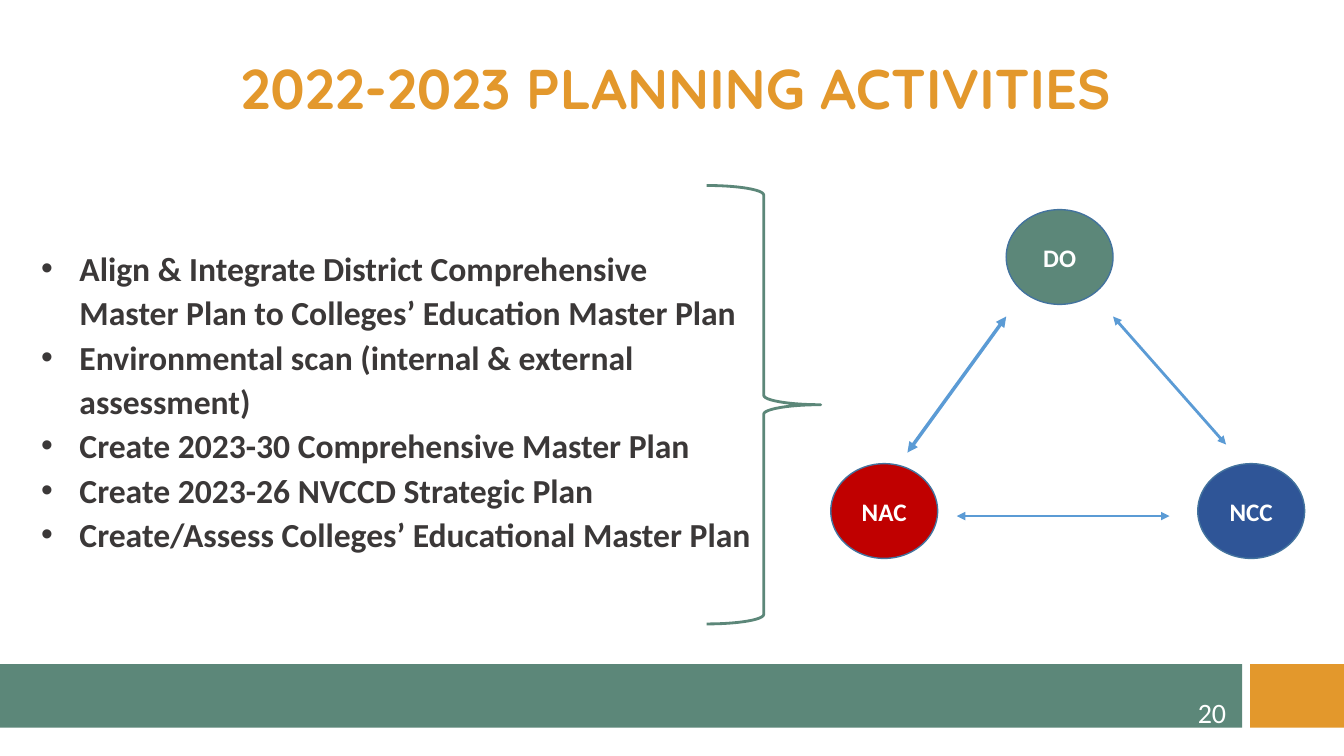
from lxml import etree
from pptx import Presentation
from pptx.dml.color import RGBColor
from pptx.enum.shapes import MSO_CONNECTOR, MSO_SHAPE
from pptx.enum.text import MSO_ANCHOR, PP_ALIGN
from pptx.oxml.ns import qn
from pptx.util import Pt

PX = 9144  # EMU per px, 100 px to the inch
RECT, BRACE = MSO_SHAPE.RECTANGLE, MSO_SHAPE.RIGHT_BRACE
NODE = MSO_SHAPE.FLOWCHART_CONNECTOR
STRAIGHT = MSO_CONNECTOR.STRAIGHT
TOP, MIDDLE = MSO_ANCHOR.TOP, MSO_ANCHOR.MIDDLE
LEFT, CENTER, RIGHT = PP_ALIGN.LEFT, PP_ALIGN.CENTER, PP_ALIGN.RIGHT

GREEN, ORANGE, RED, NAVY = "5C8779", "E3982C", "C00000", "2F5597"
WHITE, DARK, OUTLINE, ARROW = "FFFFFF", "3B3838", "43739E", "5B9BD5"

TITLE_FONT = {"name": "Quicksand", "size": Pt(40), "bold": True}
BODY_FONT = {"name": "Calibri", "size": Pt(24), "bold": True}
NODE_FONT = {"name": "Calibri", "size": Pt(18), "bold": True}
NUMBER_FONT = {"name": "Calibri", "size": Pt(20), "bold": False}

ACTIVITIES = [
    "Align & Integrate District Comprehensive Master Plan to Colleges’ Education Master Plan",
    "Environmental scan (internal & external assessment)",
    "Create 2023-30 Comprehensive Master Plan",
    "Create 2023-26 NVCCD Strategic Plan",
    "Create/Assess Colleges’ Educational Master Plan",
]
# Name, colour, offset in the diagram
NODES = [("DO", GREEN, 174, 0), ("NAC", RED, 0, 252), ("NCC", NAVY, 364, 252)]
# Start and end offsets in the diagram, line width
ARROWS = [
    (174, 106, 76, 241, 2.5),
    (336, 304, 125, 304, 2),
    (280, 106, 392, 233, 2),
]


def emu(*lengths):
    return [n * PX for n in lengths]


def color(value):
    return RGBColor.from_string(value)


def write(sp, lines, font, ink, align, anchor):
    tf = sp.text_frame
    tf.word_wrap = True
    tf.vertical_anchor = anchor
    for i, line in enumerate(lines):
        p = tf.paragraphs[0] if i == 0 else tf.add_paragraph()
        p.alignment = align
        r = p.add_run()
        r.text = line
        for key, value in font.items():
            setattr(r.font, key, value)
        r.font.color.rgb = color(ink)
    return tf


def add_shape(slide, kind, box, fill=None, line=None, width=1):
    sp = slide.shapes.add_shape(kind, *emu(*box))
    sp.shadow.inherit = False
    if fill:
        sp.fill.solid()
        sp.fill.fore_color.rgb = color(fill)
    else:
        sp.fill.background()
    if line:
        sp.line.color.rgb = color(line)
        sp.line.width = Pt(width)
    else:
        sp.line.fill.background()
    return sp


def add_title(slide, box):
    sp = slide.shapes.title
    sp.left, sp.top, sp.width, sp.height = emu(*box)
    write(sp, ["2022-2023 PLANNING ACTIVITIES"], TITLE_FONT, ORANGE, CENTER, TOP)


def add_footer(slide, box):
    x, y, w, h = box
    bar, gap = 1248, 8
    add_shape(slide, RECT, (x, y, bar, h), GREEN)
    add_shape(slide, RECT, (x + bar + gap, y, w - bar - gap, h), ORANGE)
    number = slide.shapes.add_textbox(*emu(x + 948, y + 28, 294, 40))
    write(number, ["20"], NUMBER_FONT, WHITE, RIGHT, MIDDLE)


def add_activities(slide, box):
    x, y, w, h = box
    sp = add_shape(slide, RECT, box, WHITE, WHITE)
    tf = write(sp, ACTIVITIES, BODY_FONT, DARK, LEFT, TOP)
    for p in tf.paragraphs:
        p.line_spacing = 1.1
        pPr = p._p.get_or_add_pPr()
        pPr.set("marL", str(38 * PX))
        pPr.set("indent", str(-38 * PX))
        etree.SubElement(pPr, qn("a:buFont"), typeface="Arial")
        etree.SubElement(pPr, qn("a:buChar"), char="•")
    # Brace around the list
    add_shape(slide, BRACE, (x + 670, y - 53, 113, 435), line=GREEN, width=2)


def add_arrow(slide, start, end, width):
    line = slide.shapes.add_connector(STRAIGHT, *emu(*start, *end))
    line.line.color.rgb = color(ARROW)
    line.line.width = Pt(width)
    ln = line.line._get_or_add_ln()
    for tag in ("a:headEnd", "a:tailEnd"):
        etree.SubElement(ln, qn(tag), type="triangle")
    etree.SubElement(line._element.spPr, qn("a:effectLst"))


def add_diagram(slide, box):
    x, y = box[:2]
    for name, fill, dx, dy in NODES:
        sp = add_shape(slide, NODE, (x + dx, y + dy, 106, 94), fill, OUTLINE)
        write(sp, [name], NODE_FONT, WHITE, CENTER, MIDDLE)
    for x1, y1, x2, y2, width in ARROWS:
        add_arrow(slide, (x + x1, y + y1), (x + x2, y + y2), width)


def main():
    prs = Presentation()
    prs.slide_width, prs.slide_height = emu(1333, 750)
    slide = prs.slides.add_slide(prs.slide_layouts.get_by_name("Title Only"))
    add_footer(slide, (-16, 659, 1379, 63))
    add_title(slide, (6, 48, 1328, 77))
    add_activities(slide, (31, 237, 725, 321))
    add_diagram(slide, (824, 208, 470, 346))
    prs.save("out.pptx")


if __name__ == "__main__":
    main()
